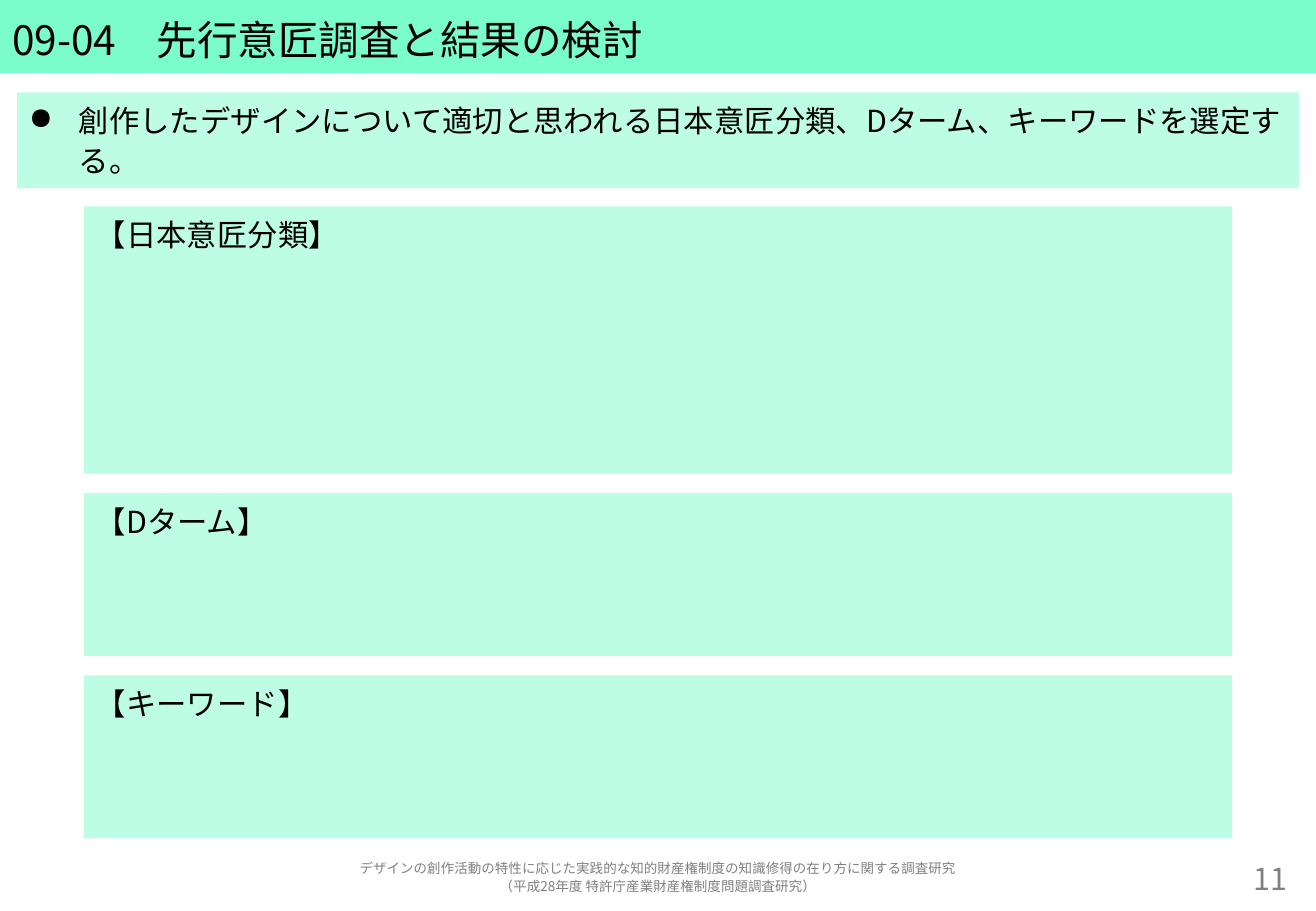
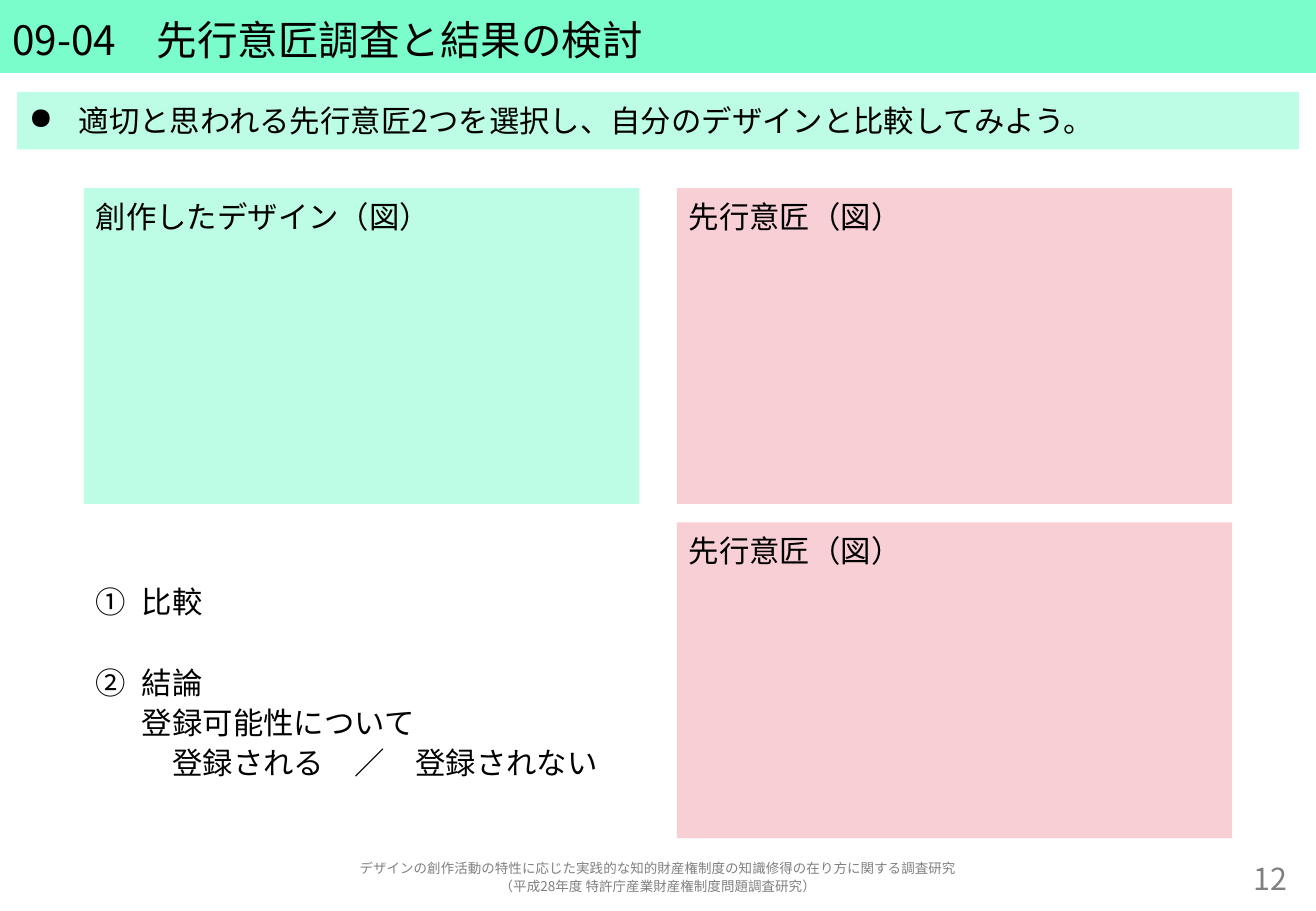
from dataclasses import dataclass

from lxml import etree
from pptx import Presentation
from pptx.dml.color import RGBColor
from pptx.enum.shapes import MSO_SHAPE
from pptx.enum.text import MSO_ANCHOR, MSO_AUTO_SIZE, PP_ALIGN
from pptx.oxml.ns import qn
from pptx.util import Emu, Pt

RECT = MSO_SHAPE.RECTANGLE
TOP, MID = MSO_ANCHOR.TOP, MSO_ANCHOR.MIDDLE
LEFT, MIDDLE, RIGHT = PP_ALIGN.LEFT, PP_ALIGN.CENTER, PP_ALIGN.RIGHT
NO_FIT = MSO_AUTO_SIZE.NONE


@dataclass(frozen=True)
class Theme:
    font: str = "Noto Sans CJK JP"
    band: str = "7BFCCB"
    mint: str = "BDFDE5"
    pink: str = "F8CFD5"
    ink: str = "000000"
    gray: str = "808080"
    head: int = 24
    text: int = 18
    small: int = 8
    lead: float = 1.1


THEME = Theme()

# Page grid, 100 px to the inch
WIDE, HIGH = 1083, 750
EDGE, SIDE = 14, 69
FULL = WIDE - 2 * EDGE
INNER = WIDE - 2 * SIDE
FOOT_Y, FOOT_H = 706, 31
BASE = 690  # lower edge of the content

TITLE = "09-04　先行意匠調査と結果の検討"
CREDIT = [
    "デザインの創作活動の特性に応じた実践的な知的財産権制度の知識修得の在り方に関する調査研究",
    "（平成28年度 特許庁産業財産権制度問題調査研究）",
]


def px(num):
    return Emu(num * 9144)


def mark(para, indent, tag, **attrs):
    """Give a paragraph a hanging bullet or number."""
    props = para._p.get_or_add_pPr()
    props.set("marL", str(px(indent)))
    props.set("indent", str(-px(indent)))
    etree.SubElement(props, qn(tag), attrs)


def write(shape, lines, size=THEME.text, color=THEME.ink, align=LEFT,
          anchor=TOP, gap=0):
    """Fill a shape with paragraphs and return them."""
    frame = shape.text_frame
    frame.word_wrap = True
    frame.auto_size = NO_FIT
    frame.vertical_anchor = anchor
    frame.margin_left = frame.margin_right = px(10)
    frame.margin_top = frame.margin_bottom = px(5)
    for i, line in enumerate(lines):
        para = frame.paragraphs[0] if i == 0 else frame.add_paragraph()
        para.text = line
        para.alignment = align
        para.line_spacing = THEME.lead
        para.space_before = Pt(gap if i else 0)
        for run in para.runs:
            run.font.size = Pt(size)
            run.font.name = THEME.font
            run.font.color.rgb = RGBColor.from_string(color)
            etree.SubElement(run.font._element, qn("a:ea"),
                             typeface=THEME.font)
    return frame.paragraphs


def paint(shape, color):
    shape.fill.solid()
    shape.fill.fore_color.rgb = RGBColor.from_string(color)


def panel(slide, area, text, color=THEME.mint):
    """Add a filled box with a label at its top."""
    box = slide.shapes.add_shape(RECT, *map(px, area))
    box.shadow.inherit = False
    box.line.fill.background()
    paint(box, color)
    return write(box, [text])


def label(slide, area, lines, **style):
    box = slide.shapes.add_textbox(*map(px, area))
    return write(box, lines, anchor=MID, **style)


def page(deck, num, task, depth):
    """Add a slide with title band, task line and footer."""
    slide = deck.slides.add_slide(deck.slide_layouts[5])
    title = slide.shapes.title
    title.left, title.top, title.width, title.height = map(
        px, (0, 0, WIDE, 60))
    paint(title, THEME.band)
    write(title, [TITLE], size=THEME.head, anchor=MID)

    paras = panel(slide, (EDGE, 76, FULL, depth), task)
    mark(paras[0], 41, "a:buChar", char="●")

    label(slide, (935, FOOT_Y, 134, FOOT_H), [str(num)],
          color=THEME.gray, align=RIGHT)
    label(slide, (EDGE, FOOT_Y, FULL, FOOT_H), CREDIT,
          size=THEME.small, color=THEME.gray, align=MIDDLE)
    return slide


def terms(deck):
    slide = page(deck, 11, "創作したデザインについて適切と思われる日本意匠分類、"
                 "Dターム、キーワードを選定する。", 79)
    # Stacked answer boxes
    top = 170
    for text, high in (("【日本意匠分類】", 220), ("【Dターム】", 134),
                       ("【キーワード】", 134)):
        panel(slide, (SIDE, top, INNER, high), text)
        top += high + 16


def compare(deck):
    slide = page(deck, 12, "適切と思われる先行意匠2つを選択し、"
                 "自分のデザインと比較してみよう。", 47)
    # Two by two grid
    wide, high = 457, 260
    right = SIDE + INNER - wide
    upper, lower = 155, BASE - high
    panel(slide, (SIDE, upper, wide, high), "創作したデザイン（図）")
    for top in (upper, lower):
        panel(slide, (right, top, wide, high), "先行意匠（図）", THEME.pink)

    # Numbered answers
    steps = ["比較", "結論\v登録可能性について\v　登録される　／　登録されない"]
    for para in label(slide, (SIDE, lower, wide, high), steps, gap=24):
        mark(para, 38, "a:buAutoNum", type="circleNumDbPlain")


def main():
    deck = Presentation()
    deck.slide_width, deck.slide_height = px(WIDE), px(HIGH)
    terms(deck)
    compare(deck)
    deck.save("out.pptx")


if __name__ == "__main__":
    main()
